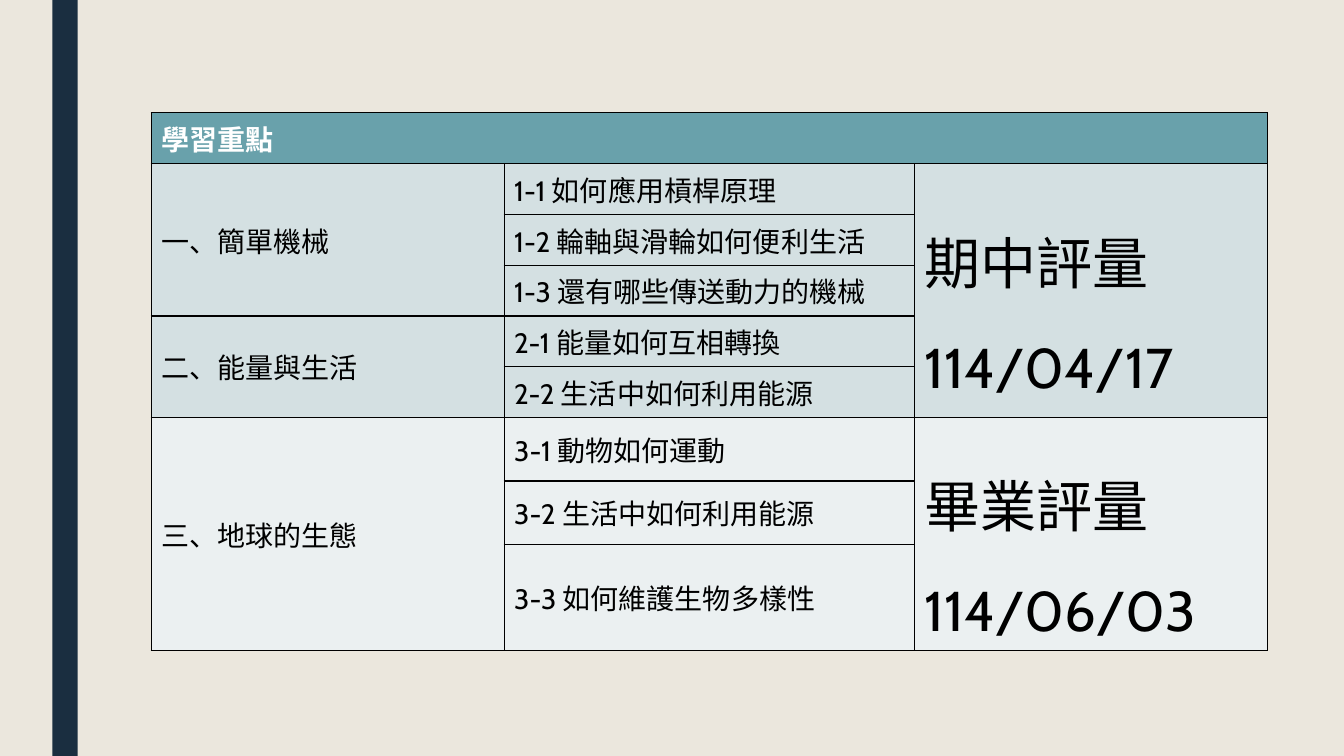
import pptx
import pptx.dml.color
import pptx.enum.shapes
import pptx.enum.text
import pptx.oxml
import pptx.util
from pptx.util import Inches

# Content: heading, units with their lessons, exams with their units
HEADING = "學習重點"
EXAMS = [
    (["期中評量", "114/04/17"], "D4E0E2", [
        ("一、簡單機械", ["1-1 如何應用槓桿原理", "1-2 輪軸與滑輪如何便利生活",
                    "1-3 還有哪些傳送動力的機械"]),
        ("二、能量與生活", ["2-1 能量如何互相轉換", "2-2 生活中如何利用能源"]),
    ]),
    (["畢業評量", "114/06/03"], "EBF0F1", [
        ("三、地球的生態", ["3-1 動物如何運動", "3-2 生活中如何利用能源",
                     "3-3 如何維護生物多樣性"]),
    ]),
]
COLUMN_WIDTHS = [3.5, 4.07, 3.5]
ROW_HEIGHTS = [0.39] * 6 + [0.63] * 3
FONT = "Cabin"


def color(hex_code):
    return pptx.dml.color.RGBColor.from_string(hex_code)


def paint(area, hex_code):
    area.fill.solid()
    area.fill.fore_color.rgb = color(hex_code)


def add_borders(cell):
    properties = cell._tc.get_or_add_tcPr()
    for side in "LRTB":
        properties.append(pptx.oxml.parse_xml(
            f'<a:ln{side} xmlns:a="http://schemas.openxmlformats.org/drawingml/2006/main" '
            'w="12700"><a:solidFill><a:srgbClr val="000000"/></a:solidFill>'
            f'</a:ln{side}>'))


def write(cell, lines, size=20, ink="000000", bold=False, spacing=None):
    cell.vertical_anchor = pptx.enum.text.MSO_ANCHOR.MIDDLE
    frame = cell.text_frame
    for number, line in enumerate(lines):
        paragraph = frame.add_paragraph() if number else frame.paragraphs[0]
        paragraph.alignment = pptx.enum.text.PP_ALIGN.JUSTIFY
        if spacing:
            paragraph.line_spacing = spacing
        run = paragraph.add_run()
        run.text = line
        run.font.name = FONT
        run.font.size = pptx.util.Pt(size)
        run.font.bold = bold
        run.font.color.rgb = color(ink)


deck = pptx.Presentation()
deck.slide_width, deck.slide_height = Inches(13.33), Inches(7.5)
slide = deck.slides.add_slide(deck.slide_layouts[6])
paint(slide.background, "EBE7DD")

# Side band
band = slide.shapes.add_shape(pptx.enum.shapes.MSO_SHAPE.RECTANGLE,
                              Inches(0.52), 0, Inches(0.25), Inches(7.5))
band.shadow.inherit = False
paint(band, "1A2E40")
band.line.fill.background()

# Table grid
plan = slide.shapes.add_table(
    len(ROW_HEIGHTS), len(COLUMN_WIDTHS), Inches(1.5), Inches(1.12),
    Inches(sum(COLUMN_WIDTHS)), Inches(sum(ROW_HEIGHTS))).table
for column, width in zip(plan.columns, COLUMN_WIDTHS):
    column.width = Inches(width)
for row, height in zip(plan.rows, ROW_HEIGHTS):
    row.height = Inches(height)
for cell in plan.iter_cells():
    add_borders(cell)
    paint(cell, "69A1AB")

# Heading row
plan.cell(0, 0).merge(plan.cell(0, 2))
write(plan.cell(0, 0), [HEADING], ink="FFFFFF", bold=True)

# Units, lessons and exams
next_row = 1
for exam, tint, units in EXAMS:
    exam_row = next_row
    for unit, lessons in units:
        unit_row = next_row
        for lesson in lessons:
            for column in range(3):
                paint(plan.cell(next_row, column), tint)
            write(plan.cell(next_row, 1), [lesson])
            next_row += 1
        plan.cell(unit_row, 0).merge(plan.cell(next_row - 1, 0))
        write(plan.cell(unit_row, 0), [unit])
    plan.cell(exam_row, 2).merge(plan.cell(next_row - 1, 2))
    write(plan.cell(exam_row, 2), exam, size=40, spacing=1.5)

deck.save("out.pptx")
